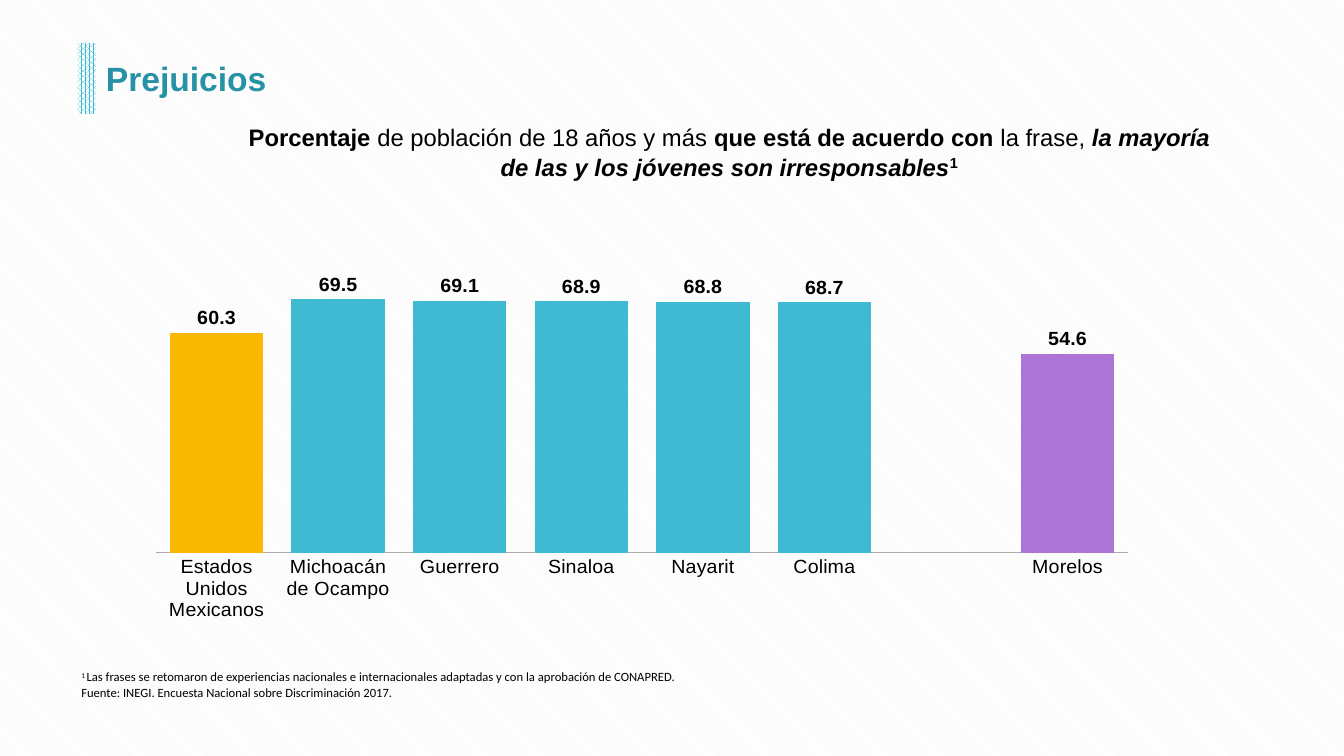
from lxml import etree
from pptx import Presentation
from pptx.chart import data as chart_data
from pptx.dml import color
from pptx.enum import chart as ch, dml, shapes, text
from pptx.oxml import ns
from pptx.util import Cm, Pt

COLORS = {"teal": "40BAD2", "title": "2791A6", "amber": "FAB900", "violet": "AB74D5",
          "black": "000000", "white": "FFFFFF", "stripe": "F2F2F2", "axis": "AFABAB"}
STATES = [("Estados Unidos Mexicanos", 60.3), ("Michoacán de Ocampo", 69.5),
          ("Guerrero", 69.1), ("Sinaloa", 68.9), ("Nayarit", 68.8),
          ("Colima", 68.7), ("", None), ("Morelos", 54.6)]
HIGHLIGHTS = {0: "amber", 7: "violet"}
PLOT = {"x": 0, "y": 0.084, "w": 0.943, "h": 0.763}


def rgb(name):
    return color.RGBColor.from_string(COLORS[name])


def pattern(fill, kind, fore):
    fill.patterned()
    fill.pattern = kind
    fill.fore_color.rgb = rgb(fore)
    fill.back_color.rgb = rgb("white")


def add_text(slide, box, paragraphs, size, font="Arial", fore="black", align="LEFT",
             anchor="TOP", grow=True):
    """Each paragraph lists (words, format) pairs; format takes bold, italic, size, raised."""
    frame = slide.shapes.add_textbox(*map(Cm, box)).text_frame
    frame.word_wrap = True
    frame.vertical_anchor = text.MSO_ANCHOR[anchor]
    frame.auto_size = text.MSO_AUTO_SIZE.SHAPE_TO_FIT_TEXT if grow else text.MSO_AUTO_SIZE.NONE
    for i, pieces in enumerate(paragraphs):
        paragraph = frame.add_paragraph() if i else frame.paragraphs[0]
        paragraph.alignment = text.PP_ALIGN[align]
        for words, style in pieces:
            run = paragraph.add_run()
            run.text = words
            run.font.name = font
            run.font.size = Pt(style.get("size", size))
            run.font.bold = style.get("bold", False)
            run.font.italic = style.get("italic", False)
            run.font.color.rgb = rgb(fore)
            if style.get("raised"):
                run._r.get_or_add_rPr().set("baseline", "30000")


def add_heading(slide, left, top, width, height):
    # Woven bar beside the title
    bar = slide.shapes.add_shape(shapes.MSO_SHAPE.RECTANGLE,
                                 Cm(left), Cm(top + 0.18), Cm(0.46), Cm(1.78))
    bar.shadow.inherit = False
    pattern(bar.fill, dml.MSO_PATTERN.PERCENT_75, "teal")
    bar.line.fill.background()
    add_text(slide, (left + 0.46, top, width - 0.46, height),
             [[("Prejuicios", {"bold": True})]], 24, fore="title", anchor="MIDDLE", grow=False)


def add_question(slide, *box):
    bold = {"bold": True}
    add_text(slide, box, [[
        ("Porcentaje ", bold), ("de población de 18 años y más ", {}),
        ("que está de acuerdo con ", bold), ("la frase, ", {}),
        ("la mayoría de las y los jóvenes son irresponsables", {"bold": True, "italic": True}),
        ("1", {"bold": True, "size": 18, "raised": True})]],
        17, align="CENTER", anchor="BOTTOM")


def add_state_chart(slide, *box):
    agreement = chart_data.CategoryChartData(number_format="0.0")
    agreement.categories = [state for state, _ in STATES]
    agreement.add_series("Series 1", [share for _, share in STATES])
    chart = slide.shapes.add_chart(ch.XL_CHART_TYPE.COLUMN_CLUSTERED,
                                   *map(Cm, box), agreement).chart
    chart.has_legend = False
    chart.has_title = False
    chart.font.name = "Arial"
    chart.font.size = Pt(14)
    chart.font.color.rgb = rgb("black")

    # Axes
    states = chart.category_axis
    states.major_tick_mark = ch.XL_TICK_MARK.NONE
    states.format.line.color.rgb = rgb("axis")
    states.format.line.width = Pt(1)
    shares = chart.value_axis
    shares.visible = False
    shares.has_major_gridlines = False
    shares.minimum_scale, shares.maximum_scale = 0, 80

    # Columns and their labels
    plot = chart.plots[0]
    plot.gap_width = 30
    plot.vary_by_categories = False
    columns = plot.series[0]
    columns.format.fill.solid()
    columns.format.fill.fore_color.rgb = rgb("teal")
    for index, name in HIGHLIGHTS.items():
        fill = columns.points[index].format.fill
        fill.solid()
        fill.fore_color.rgb = rgb(name)
    labels = columns.data_labels
    labels.show_value = True
    labels.number_format = "0.0"
    labels.number_format_is_linked = False
    labels.position = ch.XL_LABEL_POSITION.OUTSIDE_END
    labels.font.bold = True
    labels.font.size = Pt(14)

    # Fixed inner plot area
    area = chart._chartSpace.chart.plotArea
    for old in area.findall(ns.qn("c:layout")):
        area.remove(old)
    layout = etree.Element(ns.qn("c:layout"))
    manual = etree.SubElement(layout, ns.qn("c:manualLayout"))
    settings = [("layoutTarget", "inner"), ("xMode", "edge"), ("yMode", "edge"), *PLOT.items()]
    for tag, value in settings:
        etree.SubElement(manual, ns.qn(f"c:{tag}")).set("val", str(value))
    area.insert(0, layout)


def add_source(slide, *box):
    add_text(slide, box, [
        [("1 ", {"raised": True}),
         ("Las frases se retomaron de experiencias nacionales e internacionales adaptadas "
          "y con la aprobación de CONAPRED. ", {})],
        [("Fuente: INEGI. Encuesta Nacional sobre Discriminación 2017.", {})]],
        9, font="Calibri", align="JUSTIFY")


def main():
    deck = Presentation()
    deck.slide_width, deck.slide_height = Cm(33.87), Cm(19.05)
    slide = deck.slides.add_slide(deck.slide_layouts[6])
    pattern(slide.background.fill, dml.MSO_PATTERN.LIGHT_DOWNWARD_DIAGONAL, "stripe")
    add_heading(slide, 1.96, 0.91, 29.49, 2.11)
    add_question(slide, 5.77, 2.95, 25.22, 1.75)
    add_state_chart(slide, 3.91, 5.77, 26.01, 9.88)
    add_source(slide, 1.8, 16.74, 15.95, 1.02)
    deck.save("out.pptx")


if __name__ == "__main__":
    main()
